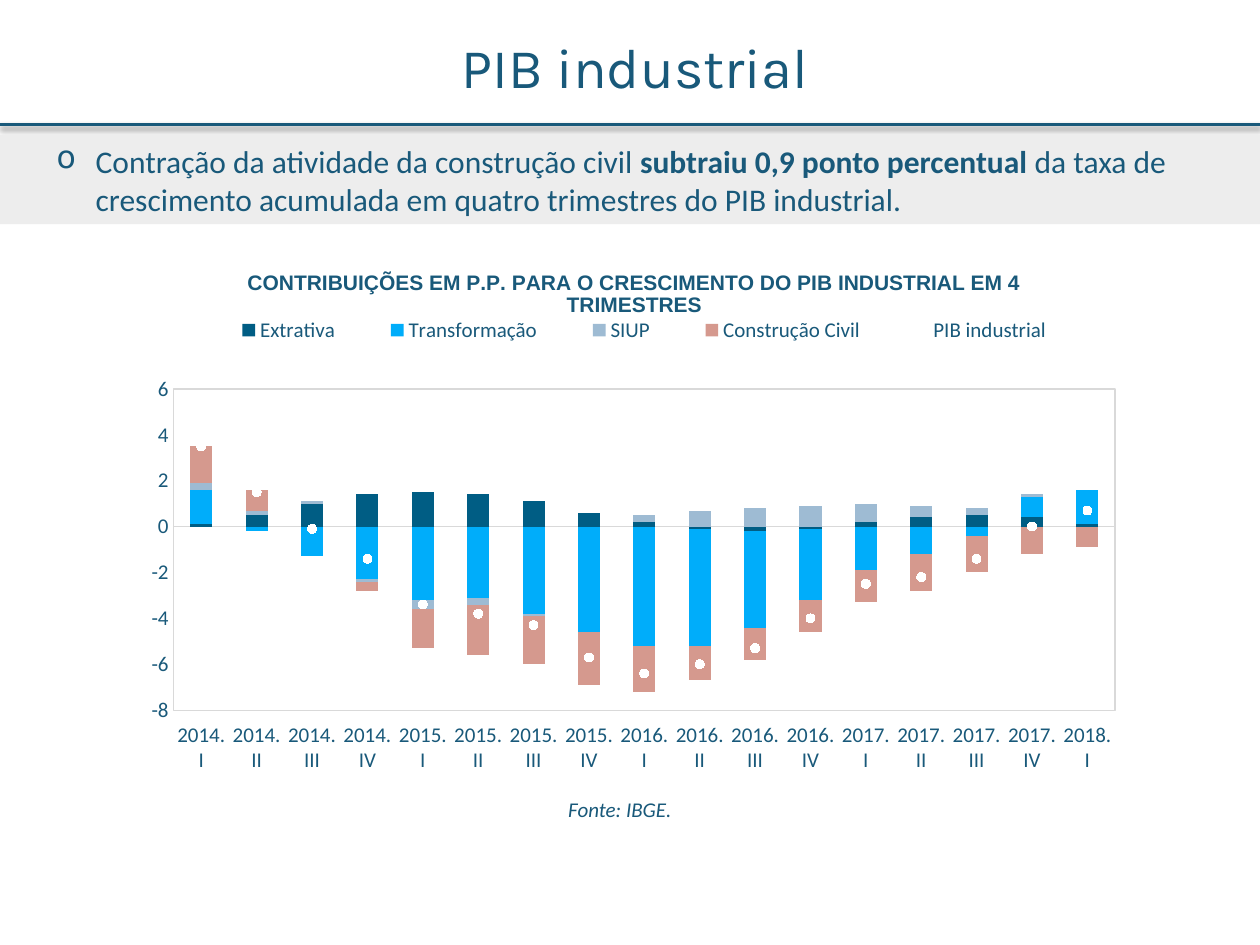
from dataclasses import dataclass

from lxml import etree
from pptx import Presentation
from pptx.chart.data import CategoryChartData
from pptx.dml.color import RGBColor
from pptx.enum.chart import (XL_CHART_TYPE, XL_LEGEND_POSITION, XL_MARKER_STYLE,
                             XL_TICK_LABEL_POSITION, XL_TICK_MARK)
from pptx.enum.shapes import MSO_CONNECTOR, MSO_SHAPE
from pptx.enum.text import MSO_ANCHOR, MSO_AUTO_SIZE, PP_ALIGN
from pptx.oxml import parse_xml
from pptx.oxml.ns import nsdecls, qn
from pptx.util import Inches, Pt

STACKED = XL_CHART_TYPE.COLUMN_STACKED
LEGEND_TOP = XL_LEGEND_POSITION.TOP
CIRCLE = XL_MARKER_STYLE.CIRCLE
LABELS_LOW = XL_TICK_LABEL_POSITION.LOW
NO_TICK = XL_TICK_MARK.NONE
STRAIGHT = MSO_CONNECTOR.STRAIGHT
RECTANGLE = MSO_SHAPE.RECTANGLE
MIDDLE = MSO_ANCHOR.MIDDLE
FIT_SHAPE = MSO_AUTO_SIZE.SHAPE_TO_FIT_TEXT
LEFT, CENTER = PP_ALIGN.LEFT, PP_ALIGN.CENTER


@dataclass(frozen=True)
class Theme:
    """Colours, fonts and type sizes of the slide."""
    ink: str = "19597A"
    white: str = "FFFFFF"
    band: str = "EDEDED"
    border: str = "D9D9D9"
    bars: tuple = ("005D84", "00ADFA", "9EBBD3", "D5998E")
    heading_font: str = "Karla"
    body_font: str = "Calibri"
    chart_title_font: str = "Arial"
    heading: int = 32
    body: int = 18
    small: int = 12


QUARTERS = [f"{year}.{quarter}" for year in range(2014, 2019)
            for quarter in ("I", "II", "III", "IV")][:17]
CONTRIBUTIONS = {
    "Extrativa": (0.1, 0.5, 1, 1.4, 1.5, 1.4, 1.1, 0.6, 0.2, -0.1, -0.2, -0.1,
                  0.2, 0.4, 0.5, 0.4, 0.1),
    "Transformação": (1.5, -0.2, -1.3, -2.3, -3.2, -3.1, -3.8, -4.6, -5.2, -5.1,
                      -4.2, -3.1, -1.9, -1.2, -0.4, 0.9, 1.5),
    "SIUP": (0.3, 0.2, 0.1, -0.1, -0.4, -0.3, -0.1, 0, 0.3, 0.7, 0.8, 0.9, 0.8,
             0.5, 0.3, 0.1, 0),
    "Construção Civil": (1.6, 0.9, 0, -0.4, -1.7, -2.2, -2.1, -2.3, -2, -1.5,
                         -1.4, -1.4, -1.4, -1.6, -1.6, -1.2, -0.9),
    "PIB industrial": (3.5, 1.5, -0.1, -1.4, -3.4, -3.8, -4.3, -5.7, -6.4, -6,
                       -5.3, -4, -2.5, -2.2, -1.4, 0, 0.7),
}


def style_font(font, color, size, name, bold=False, italic=False):
    """Apply a format to a font."""
    font.name, font.size = name, Pt(size)
    font.bold, font.italic = bold, italic
    font.color.rgb = RGBColor.from_string(color)


def write_text(paragraph, text, **text_format):
    """Add a run of text with the given format."""
    run = paragraph.add_run()
    run.text = text
    style_font(run.font, **text_format)


def manual_layout(left, top, width=None, height=None, inner=False):
    """Return a chart layout element in fractions of the chart."""
    layout = parse_xml(f"<c:layout {nsdecls('c')}><c:manualLayout/></c:layout>")
    entries = [("layoutTarget", "inner")] if inner else []
    entries += [("xMode", "edge"), ("yMode", "edge"), ("x", left), ("y", top)]
    entries += [(tag, value) for tag, value in (("w", width), ("h", height)) if value]
    for tag, value in entries:
        etree.SubElement(layout[0], qn(f"c:{tag}")).set("val", str(value))
    return layout


def set_layout(parent, layout, previous_tag):
    """Place a layout after the given child, or first without one."""
    for old in parent.findall(qn("c:layout")):
        parent.remove(old)
    previous = parent.find(qn(previous_tag)) if previous_tag else None
    parent.insert(0 if previous is None else parent.index(previous) + 1, layout)


def move_last_series_to_line(chart):
    """Turn the last column series into a line plot on the same axes."""
    bar_plot = chart.plots[0]
    bar_element = bar_plot.series[0]._element.getparent()
    series = bar_plot.series[len(CONTRIBUTIONS) - 1]._element
    for child in series.findall(qn("c:invertIfNegative")):
        series.remove(child)
    line_element = parse_xml(
        f"<c:lineChart {nsdecls('c')}><c:grouping val='stacked'/>"
        "<c:varyColors val='0'/><c:marker val='1'/></c:lineChart>")
    line_element.insert(2, series)
    for axis in bar_element.findall(qn("c:axId")):
        etree.SubElement(line_element, qn("c:axId")).set("val", axis.get("val"))
    bar_element.addnext(line_element)
    return chart.plots[1].series[0]


class SlideBuilder:
    """Hold the theme and the current slide."""

    def __init__(self, slide, theme):
        """Keep the slide and its theme."""
        self.slide, self.theme = slide, theme

    def frame(self, shape, wrap=True, fit=True):
        """Prepare a text frame and return its first paragraph."""
        frame = shape.text_frame
        frame.margin_left = frame.margin_right = Inches(0.05)
        frame.margin_top = frame.margin_bottom = Inches(0.05)
        frame.word_wrap = wrap
        if fit:
            frame.auto_size = FIT_SHAPE
        return frame.paragraphs[0]

    def text(self, box, text, align=LEFT, wrap=True, fit=True, **text_format):
        """Add a text box."""
        shape = self.slide.shapes.add_textbox(*map(Inches, box))
        paragraph = self.frame(shape, wrap, fit)
        paragraph.alignment = align
        write_text(paragraph, text, color=self.theme.ink, **text_format)

    def bullet_band(self, box, parts):
        """Add a filled band with one bullet made of (text, bold) parts."""
        shape = self.slide.shapes.add_shape(RECTANGLE, *map(Inches, box))
        shape.shadow.inherit = False
        shape.fill.solid()
        shape.fill.fore_color.rgb = RGBColor.from_string(self.theme.band)
        shape.line.fill.background()
        paragraph = self.frame(shape)
        shape.text_frame.vertical_anchor = MIDDLE
        paragraph.alignment = LEFT
        properties = paragraph._p.get_or_add_pPr()
        properties.set("marL", str(Inches(0.71)))
        properties.set("indent", str(Inches(-0.31)))
        etree.SubElement(properties, qn("a:buChar")).set("char", "o")
        for text, bold in parts:
            write_text(paragraph, text, color=self.theme.ink, size=self.theme.body,
                       name=self.theme.body_font, bold=bold)

    def rule(self, top, width):
        """Add a horizontal rule with a soft shadow."""
        line = self.slide.shapes.add_connector(
            STRAIGHT, Inches(0), Inches(top), Inches(width), Inches(top))
        line.line.color.rgb = RGBColor.from_string(self.theme.ink)
        line.line.width = Pt(2)
        line._element.spPr.append(parse_xml(
            f"<a:effectLst {nsdecls('a')}><a:outerShdw blurRad='{Pt(3)}' "
            f"dist='{Pt(1.6)}' dir='5400000' rotWithShape='0'><a:srgbClr val='000000'>"
            "<a:alpha val='38000'/></a:srgbClr></a:outerShdw></a:effectLst>"))

    def contribution_chart(self, box, title):
        """Add stacked columns with the total as round markers."""
        theme = self.theme
        data = CategoryChartData()
        data.categories = QUARTERS
        for name, values in CONTRIBUTIONS.items():
            data.add_series(name, values)
        chart = self.slide.shapes.add_chart(STACKED, *map(Inches, box), data).chart
        style_font(chart.font, theme.ink, theme.small, theme.body_font)
        write_text(chart.chart_title.text_frame.paragraphs[0], title, color=theme.ink,
                   size=theme.small, name=theme.chart_title_font, bold=True)
        chart.chart_title.include_in_layout = False
        chart.has_legend = True
        chart.legend.position = LEGEND_TOP
        chart.legend.include_in_layout = False
        style_font(chart.legend.font, theme.ink, theme.small, theme.body_font)
        self.style_axes(chart)
        total = move_last_series_to_line(chart)
        total.smooth = False
        total.format.line.fill.background()
        total.marker.style, total.marker.size = CIRCLE, 5
        total.marker.format.fill.solid()
        total.marker.format.fill.fore_color.rgb = RGBColor.from_string(theme.white)
        total.marker.format.line.color.rgb = RGBColor.from_string(theme.white)
        columns = chart.plots[0]
        columns.gap_width, columns.overlap = 150, 100
        columns.vary_by_categories = False
        for series, color in zip(columns.series, theme.bars):
            series.invert_if_negative = False
            series.format.fill.solid()
            series.format.fill.fore_color.rgb = RGBColor.from_string(color)
        plot_area = chart._chartSpace.chart.plotArea
        set_layout(plot_area, manual_layout(0.04, 0.27, 0.94, 0.6, inner=True), None)
        set_layout(chart.legend._element, manual_layout(0.06, 0.12, 0.9, 0.08),
                   "c:legendPos")
        set_layout(chart.chart_title._element, manual_layout(0.11, 0.04), "c:tx")
        plot_area.append(parse_xml(
            f"<c:spPr {nsdecls('c', 'a')}><a:noFill/><a:ln w='{Pt(0.75)}'><a:solidFill>"
            f"<a:srgbClr val='{theme.border}'/></a:solidFill></a:ln></c:spPr>"))

    def style_axes(self, chart):
        """Format both axes of a chart."""
        for axis in (chart.category_axis, chart.value_axis):
            axis.major_tick_mark = axis.minor_tick_mark = NO_TICK
            axis.has_major_gridlines = False
            style_font(axis.tick_labels.font, self.theme.ink, self.theme.small,
                       self.theme.body_font)
        chart.category_axis.tick_label_position = LABELS_LOW
        chart.category_axis.format.line.color.rgb = RGBColor.from_string(self.theme.border)
        chart.category_axis.format.line.width = Pt(0.75)
        values = chart.value_axis
        values.format.line.fill.background()
        values.minimum_scale, values.maximum_scale, values.major_unit = -8, 6, 2


def main():
    """Build and save the slide."""
    theme = Theme()
    presentation = Presentation()
    presentation.slide_width, presentation.slide_height = Inches(10), Inches(7.5)
    slide = presentation.slides.add_slide(presentation.slide_layouts[6])
    builder = SlideBuilder(slide, theme)
    builder.text((1.22, 0.21, 7.64, 0.69), "PIB industrial", align=CENTER, fit=False,
                 size=theme.heading, name=theme.heading_font)
    builder.bullet_band((0, 1.07, 10, 0.71), [
        ("Contração da atividade da construção civil ", False),
        ("subtraiu 0,9 ponto percentual ", True),
        ("da taxa de crescimento acumulada em quatro trimestres do PIB industrial.", False)])
    builder.rule(0.99, 10)
    builder.contribution_chart(
        (1.06, 1.94, 7.95, 4.25),
        "CONTRIBUIÇÕES EM P.P. PARA O CRESCIMENTO DO PIB INDUSTRIAL EM 4 TRIMESTRES")
    builder.text((4.46, 6.27, 0.94, 0.3), "Fonte: IBGE.", wrap=False,
                 size=theme.small, name=theme.body_font, italic=True)
    presentation.save("out.pptx")


if __name__ == "__main__":
    main()
